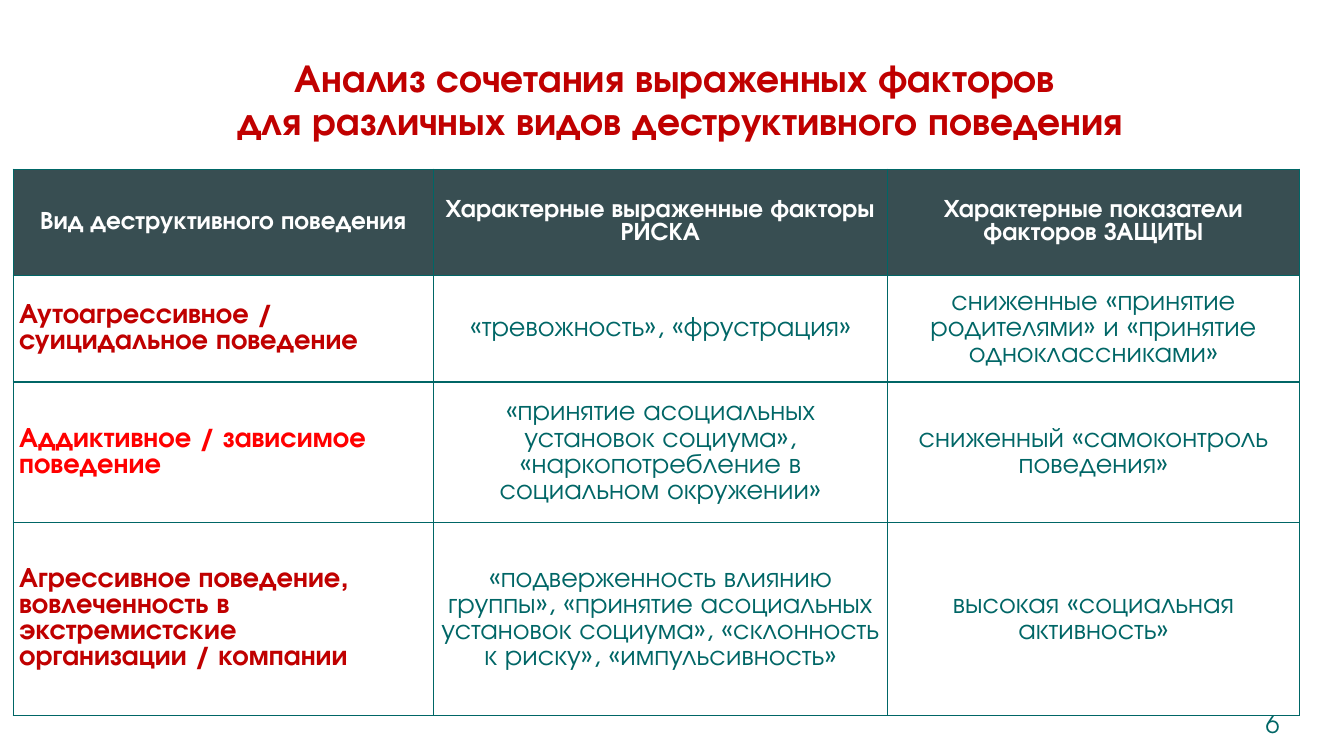
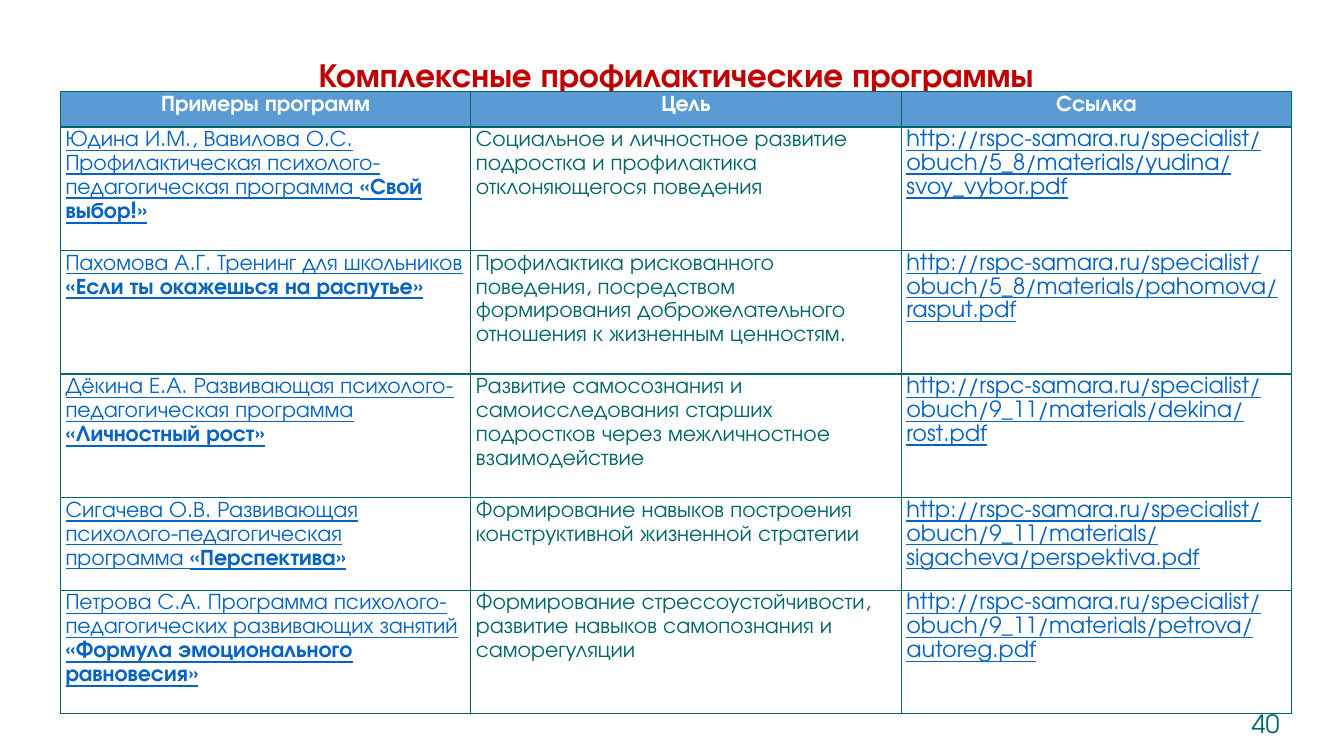
from lxml import etree
from pptx import Presentation
from pptx.dml.color import RGBColor
from pptx.enum.text import MSO_ANCHOR, PP_ALIGN
from pptx.oxml.ns import qn
from pptx.util import Inches, Pt

LEFT, CENTER, RIGHT, JUSTIFY = (PP_ALIGN.LEFT, PP_ALIGN.CENTER,
                                PP_ALIGN.RIGHT, PP_ALIGN.JUSTIFY)
TOP, MIDDLE = MSO_ANCHOR.TOP, MSO_ANCHOR.MIDDLE

# Shared look
FONT = "TeX Gyre Adventor"
WHITE, TEAL, SLATE, BLUE = "FFFFFF", "006666", "384E52", "5B9BD5"
CRIMSON, RED, LINK = "C00000", "FF0000", "0563C1"
SLIDE_WIDTH, SLIDE_HEIGHT = 13.33, 7.5
NUMBER_AREA = (11.23, 6.98, 1.56, 0.36)
BORDER_POINTS = 1

# Content
FACTOR_HEADS = ["Вид деструктивного поведения",
                "Характерные выраженные факторы РИСКА",
                "Характерные показатели факторов ЗАЩИТЫ"]
FACTORS = [
    ("Аутоагрессивное / суицидальное поведение", CRIMSON,
     "«тревожность», «фрустрация»",
     "сниженные «принятие родителями» и «принятие одноклассниками»"),
    ("Аддиктивное / зависимое поведение", RED,
     "«принятие асоциальных установок социума», "
     "«наркопотребление в социальном окружении»",
     "сниженный «самоконтроль поведения»"),
    ("Агрессивное поведение, вовлеченность в экстремистские "
     "организации / компании", CRIMSON,
     "«подверженность влиянию группы», «принятие асоциальных установок "
     "социума», «склонность к риску», «импульсивность»",
     "высокая «социальная активность»"),
]
PROGRAM_HEADS = ["Примеры программ", "Цель", "Ссылка"]
LINK_ROOT = "http://rspc-samara.ru/specialist/obuch/"
PROGRAMS = [
    ("Юдина И.М., Вавилова О.С. Профилактическая "
     "психолого-педагогическая программа ", "«Свой выбор!»",
     "Социальное и личностное развитие подростка и профилактика "
     "отклоняющегося поведения",
     "5_8/materials/yudina/svoy_vybor.pdf"),
    ("Пахомова А.Г. Тренинг для школьников ",
     "«Если ты окажешься на распутье»",
     "Профилактика рискованного поведения, посредством формирования "
     "доброжелательного отношения к жизненным ценностям.",
     "5_8/materials/pahomova/rasput.pdf"),
    ("Дёкина Е.А. Развивающая психолого-педагогическая программа ",
     "«Личностный рост»",
     "Развитие самосознания и самоисследования старших подростков "
     "через межличностное взаимодействие",
     "9_11/materials/dekina/rost.pdf"),
    ("Сигачева О.В. Развивающая психолого-педагогическая программа ",
     "«Перспектива»",
     "Формирование навыков построения конструктивной жизненной стратегии",
     "9_11/materials/sigacheva/perspektiva.pdf"),
    ("Петрова С.А. Программа психолого-педагогических развивающих занятий ",
     "«Формула эмоционального равновесия»",
     "Формирование стрессоустойчивости, развитие навыков самопознания "
     "и саморегуляции",
     "9_11/materials/petrova/autoreg.pdf"),
]


def rgb(color):
    return RGBColor.from_string(color)


def style_span(span, size, color, bold=False, underline=False):
    font = span.font
    font.name, font.size, font.bold = FONT, Pt(size), bold
    font.underline = underline
    font.color.rgb = rgb(color)


def add_text(page, area, text, size, color, align, anchor=TOP, bold=False,
             line_spacing=1.0):
    box = page.shapes.add_textbox(*map(Inches, area))
    frame = box.text_frame
    frame.word_wrap, frame.vertical_anchor = True, anchor
    para = frame.paragraphs[0]
    para.text, para.alignment = text, align
    para.line_spacing = line_spacing
    for span in para.runs:
        style_span(span, size, color, bold)


def add_page(deck, title, title_area, title_size, number):
    """Blank page with the shared title style and page number."""
    page = deck.slides.add_slide(deck.slide_layouts[6])
    add_text(page, title_area, title, title_size, CRIMSON, CENTER, MIDDLE,
             bold=True, line_spacing=0.9)
    add_text(page, NUMBER_AREA, str(number), 18, TEAL, RIGHT)
    return page


def add_borders(cell):
    properties = cell._tc.get_or_add_tcPr()
    for index, side in enumerate(("lnL", "lnR", "lnT", "lnB")):
        line = etree.Element(qn(f"a:{side}"), w=str(Pt(BORDER_POINTS)))
        fill = etree.SubElement(line, qn("a:solidFill"))
        etree.SubElement(fill, qn("a:srgbClr"), val=TEAL)
        properties.insert(index, line)


def add_grid(page, corner, columns, rows):
    """Plain bordered table; columns and rows are lengths in inches."""
    frame = page.shapes.add_table(
        len(rows), len(columns), *map(Inches, corner),
        Inches(sum(columns)), Inches(sum(rows)))
    grid = frame.table
    grid.horz_banding = False
    for column, width in zip(grid.columns, columns):
        column.width = Inches(width)
    for row, height in zip(grid.rows, rows):
        row.height = Inches(height)
    return grid


def fill_cell(cell, spans, size, align, fill=WHITE, anchor=TOP,
              insets=(0.05, 0), line_spacing=None, space_after=None):
    """Each span is (text, color, bold, underline)."""
    cell.fill.solid()
    cell.fill.fore_color.rgb = rgb(fill)
    add_borders(cell)
    cell.vertical_anchor = anchor
    cell.margin_left = cell.margin_right = Inches(insets[0])
    cell.margin_top = cell.margin_bottom = Inches(insets[1])
    para = cell.text_frame.paragraphs[0]
    para.alignment = align
    if line_spacing:
        para.line_spacing, para.space_after = line_spacing, Pt(space_after)
    for text, *look in spans:
        span = para.add_run()
        span.text = text
        style_span(span, size, *look)


def fill_heads(grid, heads, size, fill, layout):
    for cell, head in zip(grid.rows[0].cells, heads):
        fill_cell(cell, [(head, WHITE, True)], size, CENTER, fill, **layout)


def build_factors(deck):
    page = add_page(deck, "Анализ сочетания выраженных факторов \n"
                    "для различных видов деструктивного поведения",
                    (1, 0.7, 11.5, 0.61), 28, 6)
    grid = add_grid(page, (0.13, 1.68), [4.17, 4.5, 4.09],
                    [1.05, 1.05, 1.37, 1.91])
    layout = {"anchor": MIDDLE, "insets": (0.06, 0.03)}
    fill_heads(grid, FACTOR_HEADS, 18, SLATE, layout)
    for row, (behaviour, color, risk, protection) in enumerate(FACTORS, 1):
        fill_cell(grid.cell(row, 0), [(behaviour, color, True)], 20, LEFT,
                  **layout)
        for column, text in enumerate((risk, protection), 1):
            fill_cell(grid.cell(row, column), [(text, TEAL)], 20, CENTER,
                      **layout)


def build_programs(deck):
    page = add_page(deck, "Комплексные профилактические программы",
                    (0.76, 0.35, 11.89, 0.81), 24, 40)
    grid = add_grid(page, (0.6, 0.91), [4.07, 4.27, 3.87],
                    [0.35, 1.14, 1.16, 1.22, 0.86, 0.9])
    layout = {"line_spacing": 1.15, "space_after": 10}
    fill_heads(grid, PROGRAM_HEADS, 16, BLUE, layout)
    for row, (author, name, goal, address) in enumerate(PROGRAMS, 1):
        columns = [
            ([(author, LINK, False, True), (name, LINK, True, True)], LEFT),
            ([(goal, TEAL)], LEFT),
            ([(LINK_ROOT + address, LINK, False, True)], JUSTIFY),
        ]
        for cell, (spans, align) in zip(grid.rows[row].cells, columns):
            fill_cell(cell, spans, 16, align, **layout)


def main():
    deck = Presentation()
    deck.slide_width = Inches(SLIDE_WIDTH)
    deck.slide_height = Inches(SLIDE_HEIGHT)
    build_factors(deck)
    build_programs(deck)
    deck.save("out.pptx")


if __name__ == "__main__":
    main()
